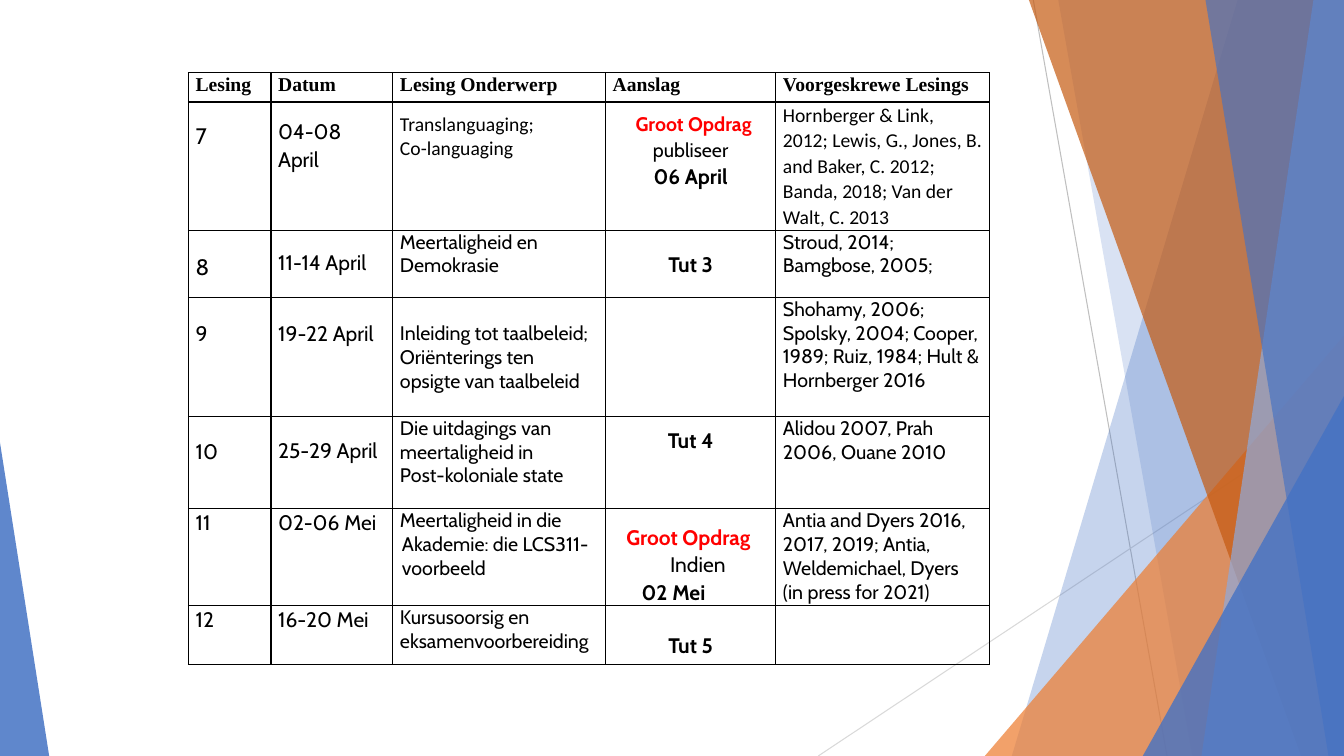
from dataclasses import dataclass

from lxml.etree import SubElement
from pptx import Presentation
from pptx.dml.color import RGBColor
from pptx.enum.shapes import MSO_CONNECTOR as Connector, MSO_SHAPE as Preset
from pptx.enum.text import PP_ALIGN as Align
from pptx.oxml.ns import qn
from pptx.util import Cm, Pt

SLIDE_WIDTH, SLIDE_HEIGHT = 33.87, 19.05
BLACK, RED = "000000", "FF0000"
BLUE, ORANGE = "4472C4", "ED7D31"
COLUMN_WIDTHS = [2.08, 3.07, 5.36, 4.29, 5.38]
ROW_HEIGHTS = [0.74, 3.23, 1.69, 3, 2.33, 2.42, 1.49]


@dataclass
class Piece:
    text: str
    bold: bool = False
    color: str = BLACK


@dataclass
class Line:
    pieces: list
    size: int = 15
    font: str = "Cabin"
    spacing: float = 1.07
    align: Align = Align.LEFT
    margin: float = 0
    indent: float = 0


@dataclass
class Entry:
    lines: list
    top: float = 0


def label(text, top=0, size=15, spacing=1.07):
    return Entry([Line([Piece(text)], size, spacing=spacing)], top)


def body(*texts, top=0, **options):
    style = {"size": 14, "spacing": 1, **options}
    return Entry([Line([Piece(text)], **style) for text in texts], top)


def heading(text):
    return Entry([Line([Piece(text, True)], 14, "Times New Roman")])


def centered(*pieces, size=15, indent=0):
    return Line(list(pieces), size, align=Align.CENTER, indent=indent)


def tutorial(text, top):
    return Entry([centered(Piece(text, True))], top)


ASSIGNMENT = Piece("Groot Opdrag ", True, RED)
PUBLISHED = Entry([
    centered(ASSIGNMENT, Piece("publiseer"), size=14, indent=0.15),
    centered(Piece("06 April", True)),
], 0.23)
SUBMITTED = Entry([
    centered(ASSIGNMENT),
    centered(Piece("Indien"), indent=0.36),
    Line([Piece("02 Mei", True)], indent=0.73),
], 0.37)

SCHEDULE = [
    [heading(text) for text in
     ("Lesing", "Datum", "Lesing Onderwerp", "Aanslag", "Voorgeskrewe Lesings")],
    [label("7", 0.49, 16), label("04-08 April", 0.4),
     body("Translanguaging;", "Co-languaging", top=0.28, font="Calibri"), PUBLISHED,
     body("Hornberger & Link, 2012; Lewis, G., Jones, B. and Baker, C. 2012; "
          "Banda, 2018; Van der Walt, C. 2013", font="Calibri", spacing=1.07)],
    [label("8", 0.56, 16), label("11-14 April", 0.45),
     body("Meertaligheid en", "Demokrasie"), tutorial("Tut 3", 0.5),
     body("Stroud, 2014; Bamgbose, 2005;")],
    [label("9", 0.55), label("19-22 April", 0.55),
     body("Inleiding tot taalbeleid; Oriënterings ten opsigte van taalbeleid", top=0.61),
     None,
     body("Shohamy, 2006; Spolsky, 2004; Cooper, 1989; Ruiz, 1984; "
          "Hult & Hornberger 2016")],
    [label("10", 0.52), label("25-29 April", 0.54, spacing=1),
     body("Die uitdagings van meertaligheid in", "Post-koloniale state"),
     tutorial("Tut 4", 0.26), body("Alidou 2007, Prah 2006, Ouane 2010")],
    [label("11"), label("02-06 Mei"),
     body("Meertaligheid in die Akademie: die LCS311-voorbeeld", margin=0.05, indent=-0.05),
     SUBMITTED,
     body("Antia and Dyers 2016, 2017, 2019; Antia, Weldemichael, Dyers "
          "(in press for 2021)")],
    [label("12"), label("16-20 Mei"), body("Kursusoorsig en eksamenvoorbereiding"),
     tutorial("Tut 5", 0.66), None],
]


def rgb(color):
    return RGBColor.from_string(color)


def paint(shape, color, opacity):
    shape.shadow.inherit = False
    shape.line.fill.background()
    shape.fill.solid()
    shape.fill.fore_color.rgb = rgb(color)
    color_element = shape.fill._xPr.find(qn("a:solidFill"))[0]
    SubElement(color_element, qn("a:alpha"), val=str(opacity * 1000))


def add_triangle(slide, left, top, width, height, apex, color, opacity):
    shape = slide.shapes.add_shape(
        Preset.ISOSCELES_TRIANGLE, Cm(left), Cm(top), Cm(width), Cm(height))
    shape.adjustments[0] = apex
    paint(shape, color, opacity)


def add_thin_line(slide, start, end, color):
    connector = slide.shapes.add_connector(
        Connector.STRAIGHT, *(Cm(length) for length in (*start, *end)))
    connector.line.color.rgb = rgb(color)
    connector.line.width = Pt(0.75)
    SubElement(connector._element.spPr, qn("a:effectLst"))


def add_right_facets(slide, left, top, width, height):
    right, bottom = left + width, top + height

    def add_facet(top_offset, bottom_offset, color, opacity):
        corners = [(left + top_offset, top), (right, top),
                   (right, bottom), (left + bottom_offset, bottom)]
        points = [(Cm(x), Cm(y)) for x, y in corners]
        builder = slide.shapes.build_freeform(*points[0])
        builder.add_line_segments(points[1:], close=True)
        paint(builder.convert_to_shape(), color, opacity)

    def add_corner(offset, drop, color, opacity):
        add_triangle(slide, left + offset, top + drop, width - offset,
                     height - drop, 1, color, opacity)

    add_thin_line(slide, (left + 5.42, top), (left + 8.79, bottom), "BFBFBF")
    add_thin_line(slide, (right, top + 10.24), (left, bottom), "D9D9D9")
    add_facet(10.57, 4.88, BLUE, 30)
    add_facet(6.05, 9.43, BLUE, 20)
    add_corner(4.2, 8.46, ORANGE, 72)
    add_facet(5.31, 12.17, "C55A11", 70)
    add_facet(12.48, 9.66, "8FAADC", 70)
    add_facet(9.76, 12.86, BLUE, 65)
    add_corner(8.18, 9.98, BLUE, 80)


def write_line(paragraph, line):
    paragraph.alignment = line.align
    paragraph.line_spacing = line.spacing
    properties = paragraph._p.get_or_add_pPr()
    properties.set("marL", str(Cm(line.margin)))
    properties.set("indent", str(Cm(line.indent)))
    for piece in line.pieces:
        run = paragraph.add_run()
        run.text = piece.text
        run.font.name = line.font
        run.font.size = Pt(line.size)
        run.font.bold = piece.bold
        run.font.color.rgb = rgb(piece.color)


def format_cell(cell):
    cell.margin_left = cell.margin_right = Cm(0.18)
    cell.margin_top = cell.margin_bottom = 0
    properties = cell._tc.get_or_add_tcPr()
    for side in ("lnL", "lnR", "lnT", "lnB"):
        border = SubElement(properties, qn(f"a:{side}"), w=str(Pt(1)))
        fill = SubElement(border, qn("a:solidFill"))
        SubElement(fill, qn("a:srgbClr"), val=BLACK)
    cell.fill.background()


def add_schedule(slide, left, top):
    frame = slide.shapes.add_table(
        len(ROW_HEIGHTS), len(COLUMN_WIDTHS), Cm(left), Cm(top),
        Cm(sum(COLUMN_WIDTHS)), Cm(sum(ROW_HEIGHTS)))
    table = frame.table
    table.first_row = table.horz_banding = False
    for column, width in zip(table.columns, COLUMN_WIDTHS):
        column.width = Cm(width)
    for row, height, entries in zip(table.rows, ROW_HEIGHTS, SCHEDULE):
        row.height = Cm(height)
        for cell, entry in zip(row.cells, entries):
            format_cell(cell)
            if entry is None:
                continue
            cell.margin_top = Cm(entry.top)
            text_frame = cell.text_frame
            for index, line in enumerate(entry.lines):
                paragraph = text_frame.add_paragraph() if index else text_frame.paragraphs[0]
                write_line(paragraph, line)


def main():
    presentation = Presentation()
    presentation.slide_width = Cm(SLIDE_WIDTH)
    presentation.slide_height = Cm(SLIDE_HEIGHT)
    slide = presentation.slides.add_slide(presentation.slide_layouts[6])
    add_right_facets(slide, 20.62, 0, SLIDE_WIDTH - 20.62, SLIDE_HEIGHT)
    add_triangle(slide, 0, 11.15, 1.24, SLIDE_HEIGHT - 11.15, 0, BLUE, 85)
    add_schedule(slide, 4.75, 1.83)
    presentation.save("out.pptx")


if __name__ == "__main__":
    main()
